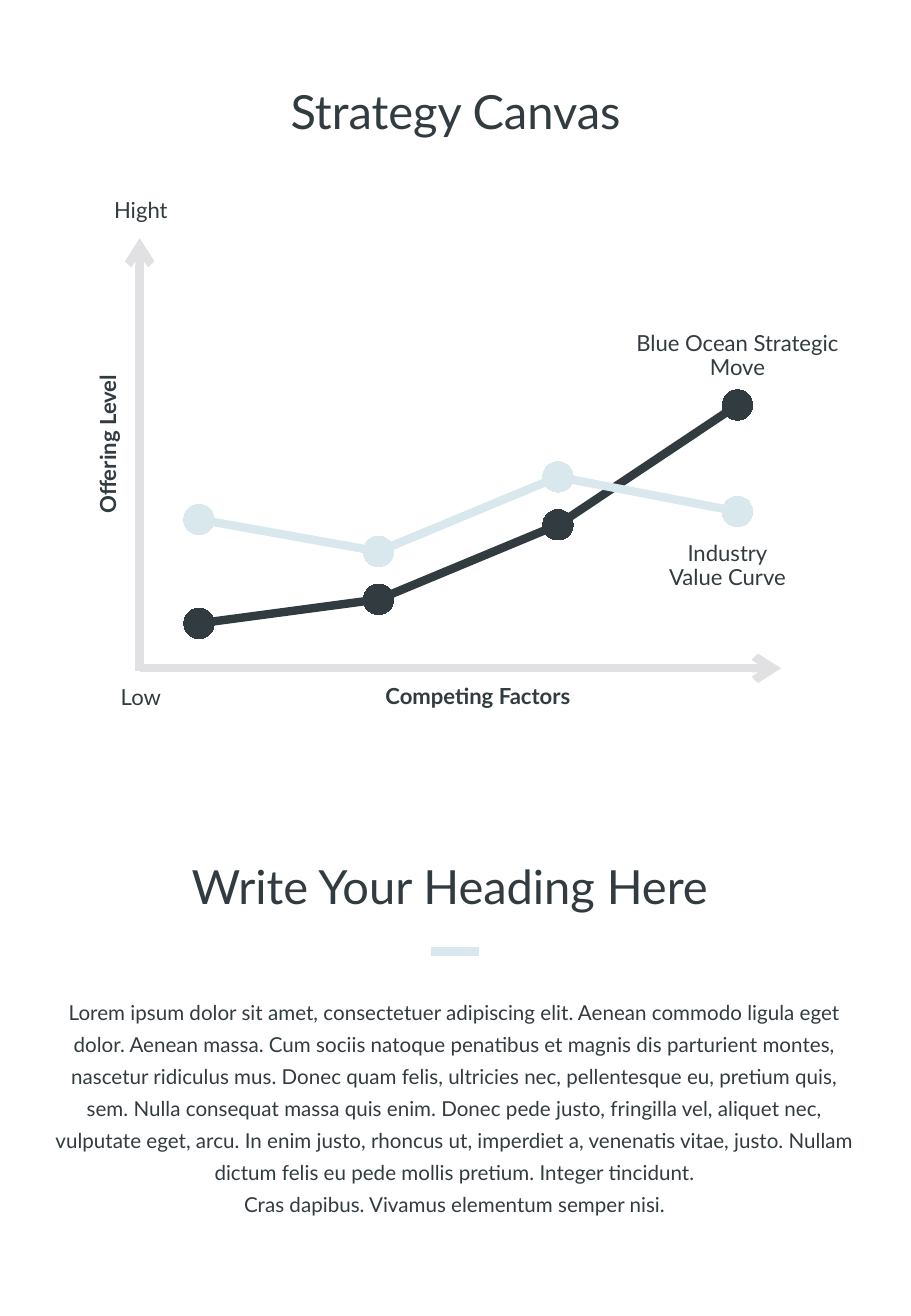
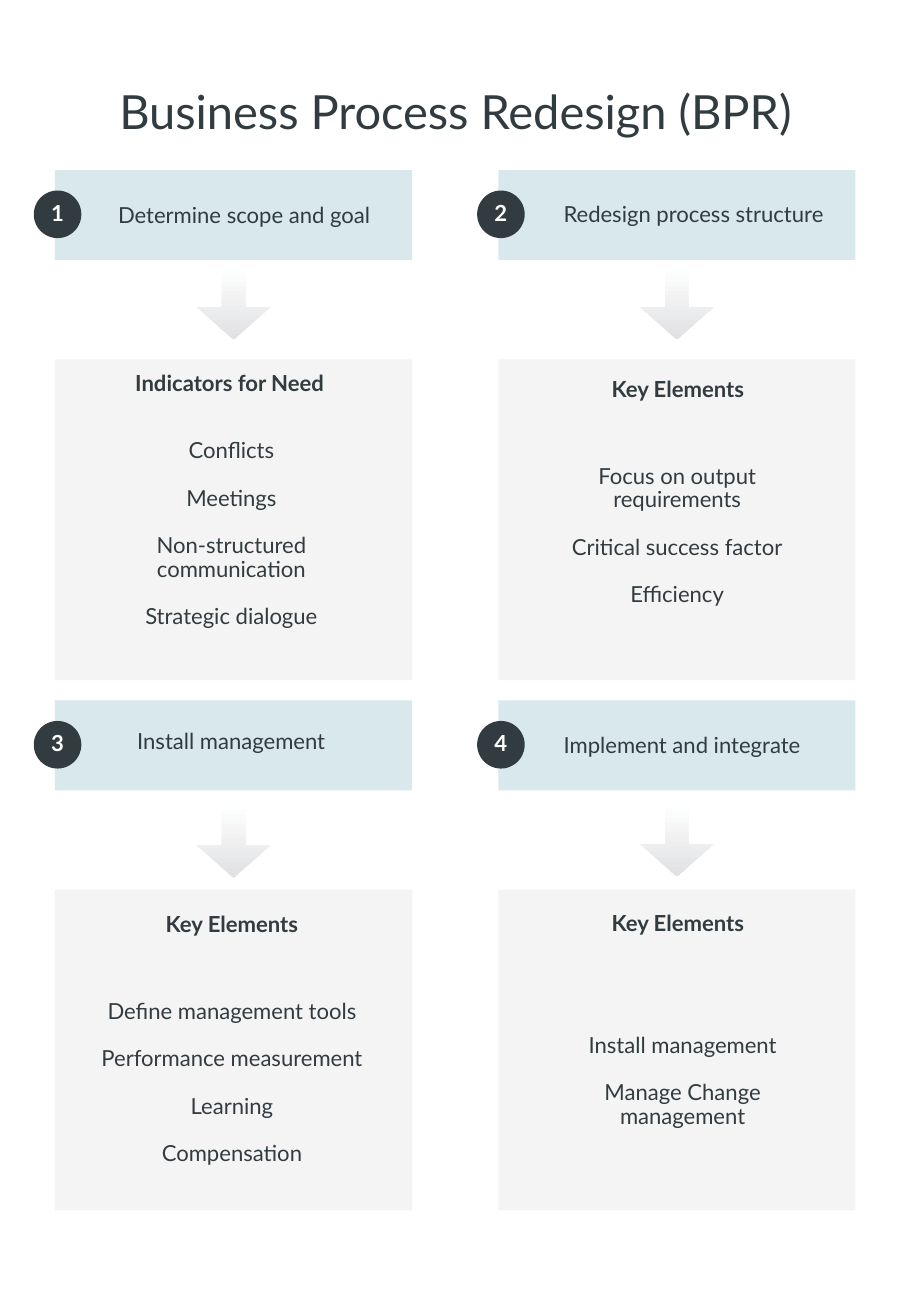
from dataclasses import dataclass

import lxml.etree
import pptx
import pptx.chart.data
import pptx.dml.color
import pptx.enum.chart
import pptx.enum.shapes
import pptx.enum.text
import pptx.oxml.ns
import pptx.util

Pt = pptx.util.Pt
qn = pptx.oxml.ns.qn
Geometry = pptx.enum.shapes.MSO_SHAPE
Anchor = pptx.enum.text.MSO_ANCHOR

COLORS = {
    "ink": "323C40",
    "sky": "D8E8ED",
    "axis": "E1E1E3",
    "card": "F4F4F4",
    "white": "FFFFFF",
    "fade": "FEFFFF",
}
FONT = "Lato"
LABEL_SIZE = 13.1
HEADING = {"size": 27.9, "spacing": 0.8}
AXIS_NAME = {"bold": True, "spacing": 0.8}


def rgb(color):
    return pptx.dml.color.RGBColor.from_string(COLORS[color])


def write(frame, text, *, size=LABEL_SIZE, bold=False, color="ink",
          spacing=0.9, gap=0, anchor=Anchor.MIDDLE, wrap=True):
    """Fill a text frame with centred text, one paragraph per line."""
    frame.margin_left = frame.margin_right = 0
    frame.margin_top = frame.margin_bottom = 0
    frame.word_wrap = wrap
    frame.vertical_anchor = anchor
    frame.text = text
    for index, paragraph in enumerate(frame.paragraphs):
        paragraph.alignment = pptx.enum.text.PP_ALIGN.CENTER
        paragraph.line_spacing = spacing
        paragraph.space_before = Pt(gap if index else 0)
        for run in paragraph.runs:
            run.font.name = FONT
            run.font.size = Pt(size)
            run.font.bold = bold
            run.font.color.rgb = rgb(color)


class Deck:
    """Holds the presentation, its style and the current slide."""

    def __init__(self, width, height):
        self.file = pptx.Presentation()
        self.file.slide_width = Pt(width)
        self.file.slide_height = Pt(height)
        self.slide = None

    def new_slide(self):
        self.slide = self.file.slides.add_slide(self.file.slide_layouts[6])

    def text(self, box, text, rotation=0, **style):
        label = self.slide.shapes.add_textbox(*map(Pt, box))
        label.rotation = rotation
        write(label.text_frame, text, **style)

    def title(self, text):
        self.text((34.6, 54.7, 470.9, 27.4), text, **HEADING)

    def shape(self, geometry, box, fill=None):
        shape = self.slide.shapes.add_shape(geometry, *map(Pt, box))
        shape.shadow.inherit = False
        shape.line.fill.background()
        if fill:
            shape.fill.solid()
            shape.fill.fore_color.rgb = rgb(fill)
        return shape

    def badge(self, box, number):
        circle = self.shape(Geometry.OVAL, box, "ink")
        write(circle.text_frame, number, bold=True, color="white", wrap=False)

    def fading_arrow(self, box):
        arrow = self.shape(Geometry.DOWN_ARROW, box)
        arrow.adjustments[0], arrow.adjustments[1] = 0.32, 0.44
        arrow.fill.gradient()
        arrow.fill.gradient_angle = 270
        for stop, color in zip(arrow.fill.gradient_stops, ("fade", "axis")):
            stop.color.rgb = rgb(color)

    def line(self, start, end, color, arrow=False):
        line = self.slide.shapes.add_connector(
            pptx.enum.shapes.MSO_CONNECTOR.STRAIGHT, *map(Pt, start + end))
        line.line.color.rgb = rgb(color)
        line.line.width = Pt(5)
        properties = line.element.spPr
        if arrow:
            lxml.etree.SubElement(
                properties.find(qn("a:ln")), qn("a:tailEnd"), type="arrow")
        lxml.etree.SubElement(properties, qn("a:effectLst"))

    def line_chart(self, box, categories, curves, top, step, plot_area):
        """Draw curves given as (name, colour, values) without axes."""
        data = pptx.chart.data.CategoryChartData()
        data.categories = categories
        for name, _, values in curves:
            data.add_series(name, values)
        chart = self.slide.shapes.add_chart(
            pptx.enum.chart.XL_CHART_TYPE.LINE_MARKERS,
            *map(Pt, box), data).chart
        chart.has_title = chart.has_legend = False
        chart.font.name, chart.font.size = "Arial", Pt(10)
        chart.font.color.rgb = rgb("ink")

        # Axes
        for axis in (chart.category_axis, chart.value_axis):
            axis.has_major_gridlines = False
            axis.major_tick_mark = pptx.enum.chart.XL_TICK_MARK.NONE
            axis.minor_tick_mark = pptx.enum.chart.XL_TICK_MARK.NONE
            axis.tick_label_position = pptx.enum.chart.XL_TICK_LABEL_POSITION.NONE
            axis.format.line.fill.background()
        scale = chart.value_axis
        scale.minimum_scale, scale.maximum_scale = 0, top
        scale.major_unit = step

        # Curves
        plot = chart.plots[0]
        plot.vary_by_categories = False
        for series, (_, color, _) in zip(plot.series, curves):
            series.smooth = False
            series.format.line.color.rgb = rgb(color)
            series.format.line.width = Pt(5)
            series.marker.style = pptx.enum.chart.XL_MARKER_STYLE.CIRCLE
            series.marker.size = 18
            series.marker.format.fill.solid()
            series.marker.format.fill.fore_color.rgb = rgb(color)
            series.marker.format.line.fill.background()

        # Curves start and end at the edges of a fixed inner plot area
        area = next(chart.element.iter(qn("c:plotArea")))
        value_axis = area.find(qn("c:valAx"))
        for parent, tag in ((value_axis, "c:crossBetween"), (area, "c:layout")):
            for old in parent.findall(qn(tag)):
                parent.remove(old)
        value_axis.find(qn("c:crosses")).addnext(
            lxml.etree.Element(qn("c:crossBetween"), val="midCat"))
        layout = lxml.etree.Element(qn("c:layout"))
        manual = lxml.etree.SubElement(layout, qn("c:manualLayout"))
        settings = {"layoutTarget": "inner", "xMode": "edge", "yMode": "edge",
                    **dict(zip("xywh", plot_area))}
        for tag, value in settings.items():
            lxml.etree.SubElement(manual, qn(f"c:{tag}"), val=str(value))
        area.insert(0, layout)


@dataclass
class Step:
    name: str
    name_box: tuple
    heading: str
    heading_box: tuple
    elements: str
    elements_box: tuple
    arrow_top: float


INTRO = (
    "Lorem ipsum dolor sit amet, consectetuer adipiscing elit. Aenean commodo "
    "ligula eget dolor. Aenean massa. Cum sociis natoque penatibus et magnis "
    "dis parturient montes, nascetur ridiculus mus. Donec quam felis, "
    "ultricies nec, pellentesque eu, pretium quis, sem. Nulla consequat massa "
    "quis enim. Donec pede justo, fringilla vel, aliquet nec, vulputate eget, "
    "arcu. In enim justo, rhoncus ut, imperdiet a, venenatis vitae, justo. "
    "Nullam dictum felis eu pede mollis pretium. Integer tincidunt.\n"
    "Cras dapibus. Vivamus elementum semper nisi."
)

STEPS = [
    Step("Determine scope and goal", (57.6, 121, 174.2, 14.4),
         "Indicators for Need", (68.4, 220.3, 135.4, 14.4),
         "Conflicts\nMeetings\nNon-structured communication\n"
         "Strategic dialogue",
         (57.6, 259.9, 159.1, 113.8), 157.7),
    Step("Redesign process structure", (326.9, 120.2, 168.5, 14.4),
         "Key Elements", (334.1, 223.9, 135.4, 14.4),
         "Focus on output requirements\nCritical success factor\nEfficiency",
         (324, 275, 154.8, 85.7), 157.7),
    Step("Install management", (65.7, 432.7, 142.6, 14.4),
         "Key Elements", (69.8, 541.4, 135.4, 14.4),
         "Define management tools\nPerformance measurement\nLearning\n"
         "Compensation",
         (53.3, 591.8, 168.5, 100.1), 476.6),
    Step("Implement and integrate", (326.9, 434.9, 154.8, 14.4),
         "Key Elements", (334.1, 540.7, 135.4, 14.4),
         "Install management\nManage Change management",
         (323.3, 612.7, 162.7, 56.9), 475.9),
]


def strategy_canvas(deck):
    deck.new_slide()
    deck.title("Strategy Canvas")

    # Axes and their names
    deck.text((19.4, 252, 91.4, 22.3), "Offering Level", rotation=270,
              **AXIS_NAME)
    deck.text((216, 402.5, 134.6, 22.3), "Competing Factors", **AXIS_NAME)
    deck.line((82.8, 397.4), (82.8, 141.1), "axis", arrow=True)
    deck.line((82.8, 396), (463, 396), "axis", arrow=True)

    # Value curves
    deck.line_chart(
        (100.1, 175.7, 357.1, 242.6), ["1", "2", "3", "4"],
        [("Series 1", "ink", (18, 27, 55, 100)),
         ("Series 2", "sky", (57, 45, 73, 60))],
        top=130, step=26, plot_area=(0.05, 0.07, 0.894, 0.846))
    deck.text((55.4, 118.1, 56.2, 14.4), "Hight")
    deck.text((55.4, 406.8, 56.2, 14.4), "Low")
    deck.text((376.6, 196.6, 121, 28.8), "Blue Ocean Strategic Move")
    deck.text((370.7, 321.1, 121, 28.8), "Industry\nValue Curve")

    # Heading and text below
    deck.text((29, 514.1, 475.2, 27.4), "Write Your Heading Here", **HEADING)
    deck.line((255.6, 563.8), (283.7, 563.8), "sky")
    deck.text((32.4, 588.2, 474.5, 132.5), INTRO, size=12.2, spacing=1.3,
              anchor=Anchor.TOP)


def process_redesign(deck):
    deck.new_slide()
    deck.title("Business Process Redesign (BPR)")

    # Two by two grid of steps
    left, top, column, row, width = 32.6, 100.8, 262.8, 314.3, 211.7
    for index, step in enumerate(STEPS):
        x = left + index % 2 * column
        y = top + index // 2 * row
        deck.shape(Geometry.RECTANGLE, (x, y, width, 53.3), "sky")
        deck.shape(Geometry.RECTANGLE, (x, y + 112.1, width, 190.1), "card")
        deck.fading_arrow((x + (width - 43.4) / 2, step.arrow_top, 43.4, 43.4))
        deck.badge((x - 12.6, y + 12.1, 28.2, 28.2), str(index + 1))
        deck.text(step.name_box, step.name)
        deck.text(step.heading_box, step.heading, bold=True)
        deck.text(step.elements_box, step.elements, gap=14)


def main():
    deck = Deck(540, 779.8)
    strategy_canvas(deck)
    process_redesign(deck)
    deck.file.save("out.pptx")


if __name__ == "__main__":
    main()
